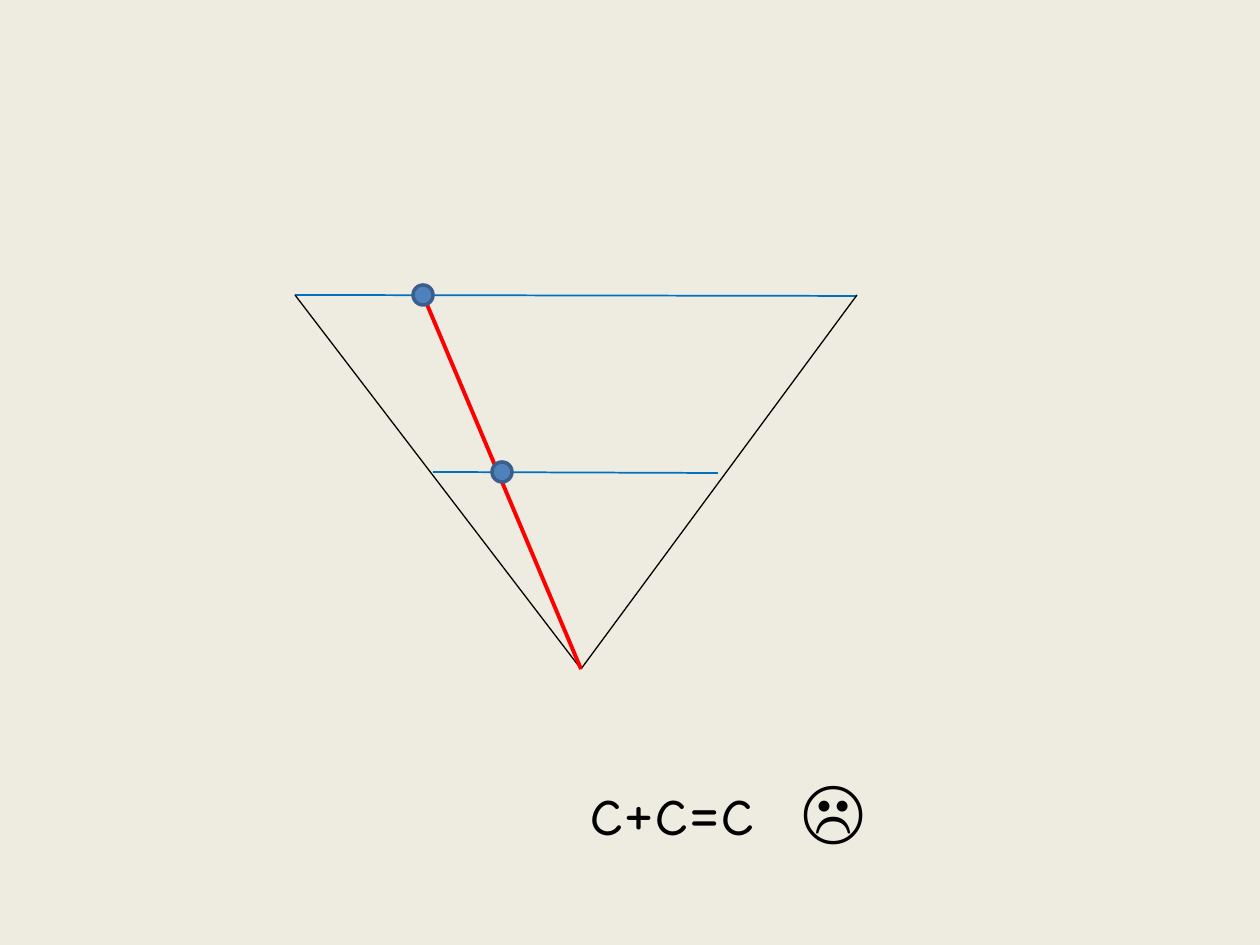
from lxml import etree
from pptx import Presentation
from pptx.dml.color import RGBColor
from pptx.enum import shapes, text
from pptx.oxml import ns
from pptx.util import Emu, Pt

COLORS = {"background": "EEECE1", "level": "0070C0", "side": "000000",
          "ray": "FF0000", "dot": "4F81BD", "rim": "3A5F8C", "text": "000000"}


def px(n):
    return Emu(round(n * 914400 / 126))


def color(name):
    return RGBColor.from_string(COLORS[name])


deck = Presentation()
deck.slide_width, deck.slide_height = px(1260), px(945)
slide = deck.slides.add_slide(deck.slide_layouts[6])
slide.background.fill.solid()
slide.background.fill.fore_color.rgb = color("background")

# Triangle, its two horizontal levels and the ray from the apex
left_corner, right_corner, apex = (295, 295), (857, 295), (581, 669)
upper_point, lower_point = (423, 295), (502, 472)
segments = [
    (left_corner, (857, 296), "level", 1),
    ((433, 472), (718, 473), "level", 1),
    (left_corner, apex, "side", 0.75),
    (right_corner, apex, "side", 0.75),
    (apex, upper_point, "ray", 2.25),
]
for start, end, role, width in segments:
    segment = slide.shapes.add_connector(
        shapes.MSO_CONNECTOR.STRAIGHT, *map(px, start + end))
    segment.line.color.rgb = color(role)
    segment.line.width = Pt(width)
    etree.SubElement(segment._element.spPr, ns.qn("a:effectLst"))

# Points where the ray meets the levels
radius = 10
for x, y in (upper_point, lower_point):
    dot = slide.shapes.add_shape(
        shapes.MSO_SHAPE.OVAL, px(x - radius), px(y - radius),
        px(2 * radius), px(2 * radius))
    dot.shadow.inherit = False
    dot.fill.solid()
    dot.fill.fore_color.rgb = color("dot")
    dot.line.color.rgb = color("rim")
    dot.line.width = Pt(2)

# Equation, inset from the left of its box
equation = slide.shapes.add_textbox(px(462), px(759), px(463), px(98)).text_frame
equation.word_wrap = True
equation.auto_size = text.MSO_AUTO_SIZE.SHAPE_TO_FIT_TEXT
equation.margin_left = px(128)
equation.text = "c+c=c  ☹"
font = equation.paragraphs[0].runs[0].font
font.name, font.size = "Comic Neue", Pt(40)
font.color.rgb = color("text")

deck.save("out.pptx")
